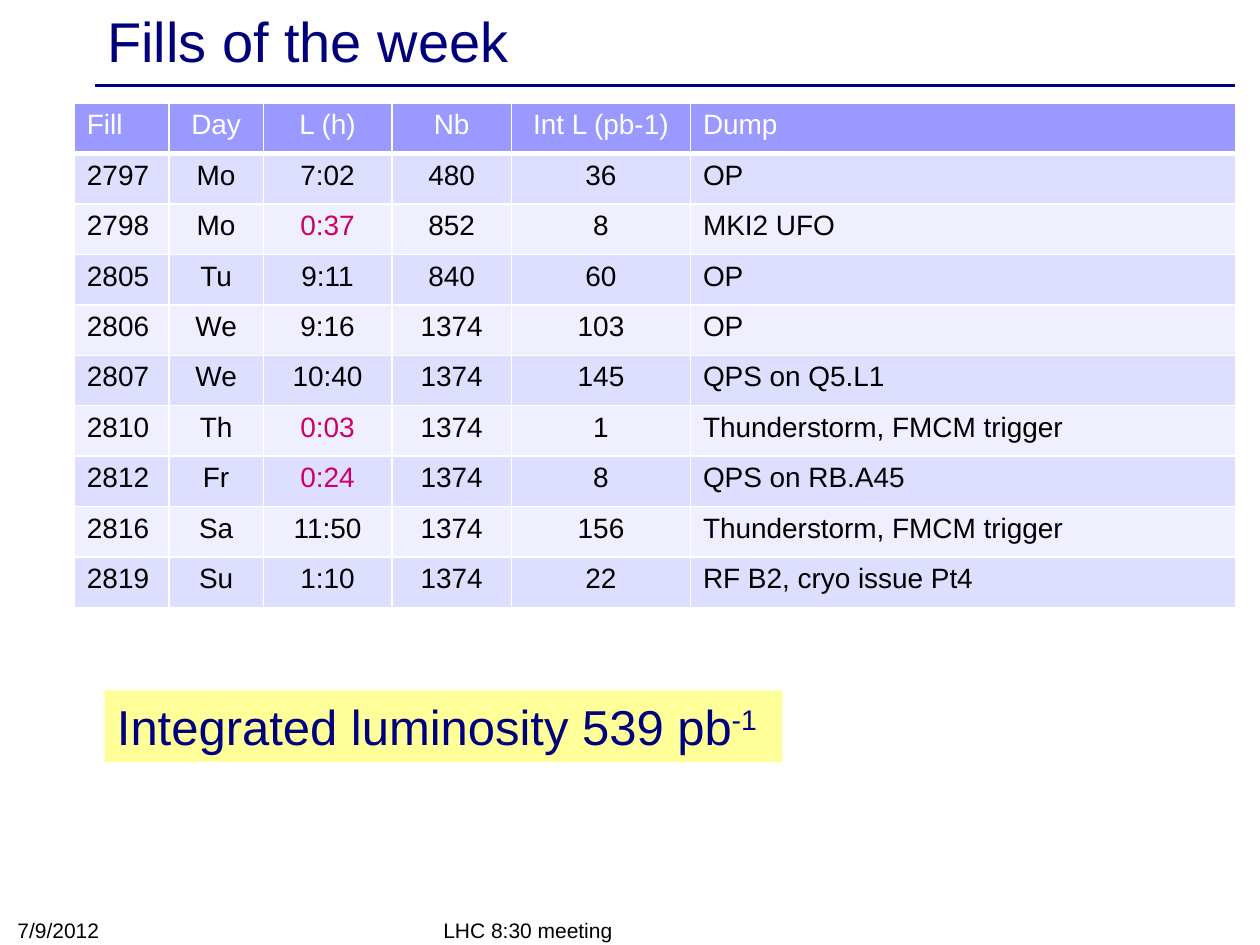
from lxml.etree import SubElement
from pptx import Presentation
from pptx.dml.color import RGBColor
from pptx.enum.shapes import MSO_CONNECTOR, MSO_SHAPE
from pptx.enum.text import MSO_ANCHOR, PP_ALIGN
from pptx.oxml.ns import qn
from pptx.util import Inches, Pt

NAVY = RGBColor(0x00, 0x00, 0x7D)
WHITE = RGBColor(0xFF, 0xFF, 0xFF)
BLACK = RGBColor(0x00, 0x00, 0x00)
MAGENTA = RGBColor(0xCC, 0x00, 0x66)
HEADER = RGBColor(0x99, 0x99, 0xFF)
BAND_DARK = RGBColor(0xDE, 0xDE, 0xFF)
BAND_LIGHT = RGBColor(0xEF, 0xEF, 0xFF)
YELLOW = RGBColor(0xFF, 0xFF, 0x99)


def add_span(para, text, size, color):
    span = para.add_run()
    span.text = text
    span.font.name = "Arial"
    span.font.size = Pt(size)
    span.font.bold = False
    span.font.color.rgb = color
    return span


def add_border(cell, side, width):
    line = SubElement(cell._tc.get_or_add_tcPr(), qn(f"a:ln{side}"), w=str(Pt(width)))
    fill = SubElement(line, qn("a:solidFill"))
    SubElement(fill, qn("a:srgbClr"), val=str(WHITE))


deck = Presentation()
deck.slide_width = Inches(10)
deck.slide_height = Inches(7.5)
page = deck.slides.add_slide(deck.slide_layouts[5])

rule = page.shapes.add_connector(
    MSO_CONNECTOR.STRAIGHT, Inches(0.75), Inches(0.68), Inches(9.8), Inches(0.68))
rule.line.color.rgb = NAVY
rule.line.width = Pt(2)
SubElement(rule._element.spPr, qn("a:effectLst"))

title = page.shapes.title
title.left, title.top = Inches(0.75), Inches(0.03)
title.width, title.height = Inches(9), Inches(0.57)
title.text_frame.vertical_anchor = MSO_ANCHOR.MIDDLE
title_para = title.text_frame.paragraphs[0]
title_para.alignment = PP_ALIGN.LEFT
add_span(title_para, "Fills of the week", 32, NAVY)

fills = [
    ("Fill", "Day", "L (h)", "Nb", "Int L (pb-1)", "Dump"),
    ("2797", "Mo", "7:02", "480", "36", "OP"),
    ("2798", "Mo", "0:37", "852", "8", "MKI2 UFO"),
    ("2805", "Tu", "9:11", "840", "60", "OP"),
    ("2806", "We", "9:16", "1374", "103", "OP"),
    ("2807", "We", "10:40", "1374", "145", "QPS on Q5.L1"),
    ("2810", "Th", "0:03", "1374", "1", "Thunderstorm, FMCM trigger"),
    ("2812", "Fr", "0:24", "1374", "8", "QPS on RB.A45"),
    ("2816", "Sa", "11:50", "1374", "156", "Thunderstorm, FMCM trigger"),
    ("2819", "Su", "1:10", "1374", "22", "RF B2, cryo issue Pt4"),
]
column_widths = [0.75, 0.75, 1.02, 0.95, 1.42, 4.33]
table = page.shapes.add_table(
    len(fills), len(column_widths),
    Inches(0.59), Inches(0.82), Inches(9.21), Inches(3.98)).table
for column, width in zip(table.columns, column_widths):
    column.width = Inches(width)

for row, values in enumerate(fills):
    table.rows[row].height = Inches(0.4)
    for column, text in enumerate(values):
        cell = table.cell(row, column)
        add_border(cell, "L", 1)
        add_border(cell, "R", 1)
        add_border(cell, "T", 3 if row == 1 else 1)
        add_border(cell, "B", 3 if row == 0 else 1)
        cell.fill.solid()
        if row == 0:
            cell.fill.fore_color.rgb = HEADER
            color = WHITE
        else:
            cell.fill.fore_color.rgb = BAND_DARK if row % 2 else BAND_LIGHT
            color = MAGENTA if text.startswith("0:") else BLACK
        para = cell.text_frame.paragraphs[0]
        para.alignment = PP_ALIGN.LEFT if column in (0, 5) else PP_ALIGN.CENTER
        add_span(para, text, 16, color)

for text, left, top, width, height in [
    ("LHC 8:30 meeting", 3.42, 7.25, 3.17, 0.28),
    ("7/9/2012", 0.04, 7.24, 2.33, 0.29),
]:
    box = page.shapes.add_textbox(Inches(left), Inches(top), Inches(width), Inches(height))
    box.text_frame.word_wrap = True
    box.text_frame.vertical_anchor = MSO_ANCHOR.BOTTOM
    add_span(box.text_frame.paragraphs[0], text, 12, BLACK)

total = page.shapes.add_shape(
    MSO_SHAPE.RECTANGLE, Inches(0.83), Inches(5.48), Inches(5.38), Inches(0.57))
total.shadow.inherit = False
total.fill.solid()
total.fill.fore_color.rgb = YELLOW
total.line.fill.background()
total.text_frame.word_wrap = True
total.text_frame.vertical_anchor = MSO_ANCHOR.TOP
total_para = total.text_frame.paragraphs[0]
total_para.alignment = PP_ALIGN.LEFT
add_span(total_para, "Integrated luminosity 539 pb", 28, NAVY)
exponent = add_span(total_para, "-1", 28, NAVY)
exponent._r.get_or_add_rPr().set("baseline", "30000")

deck.save("out.pptx")
